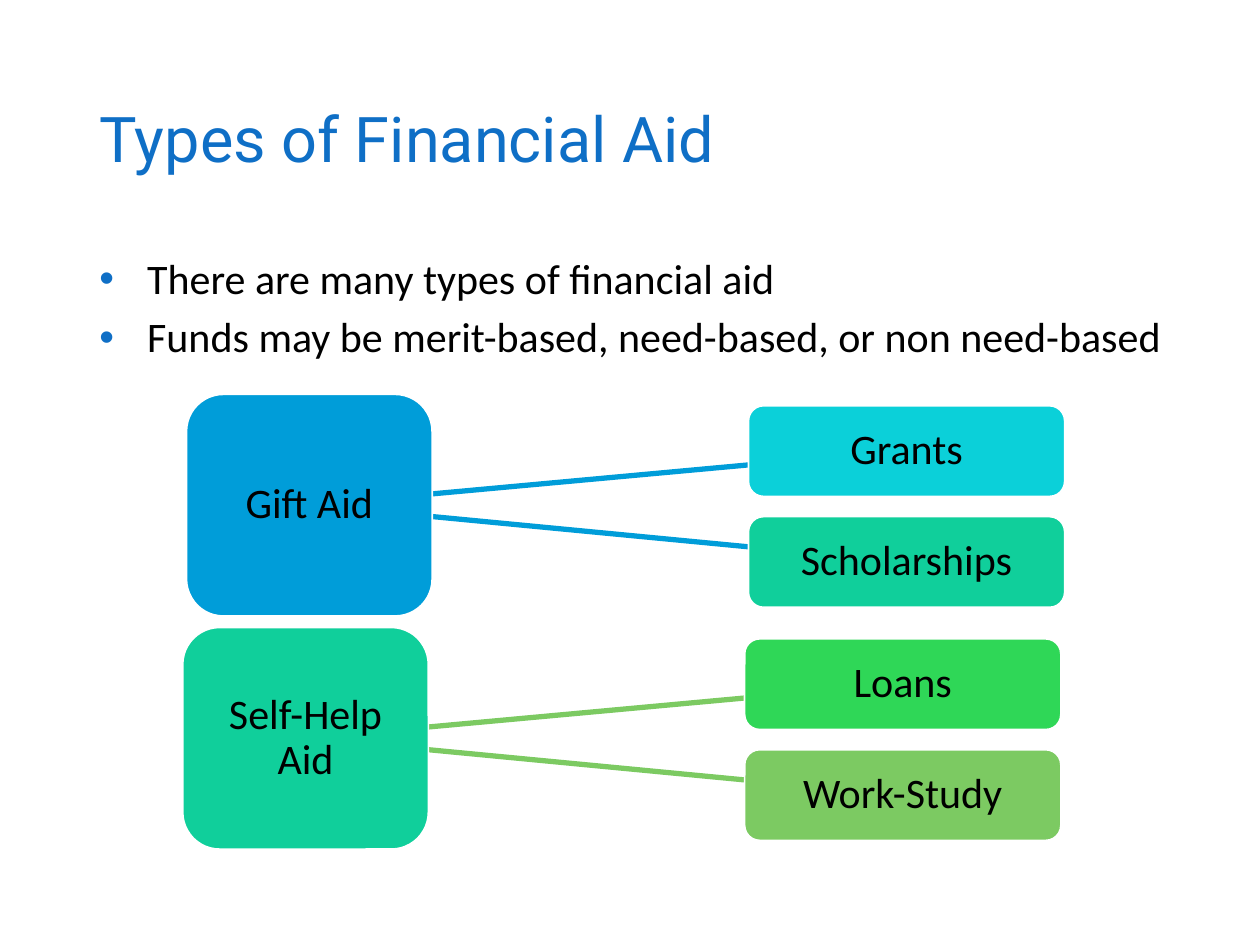
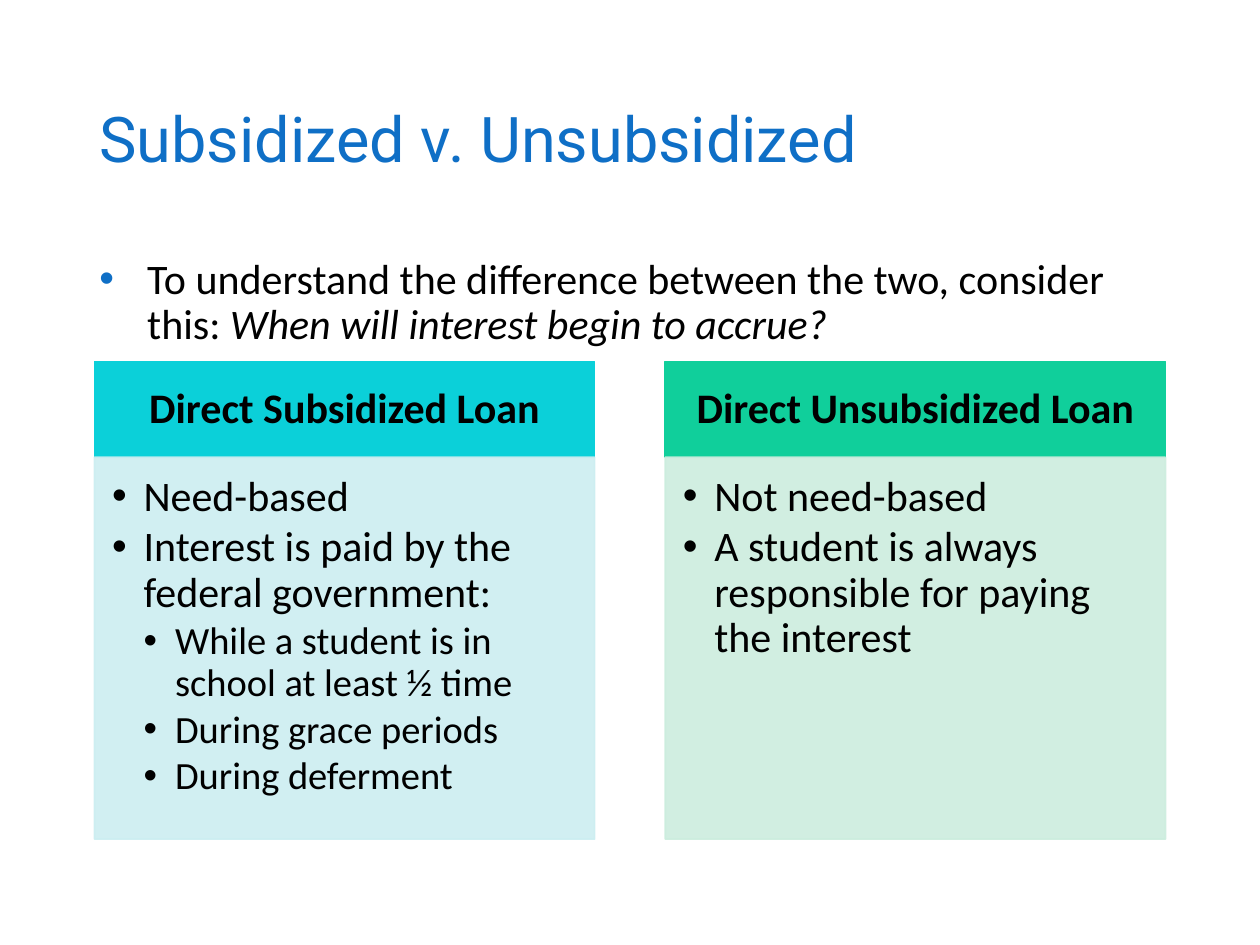
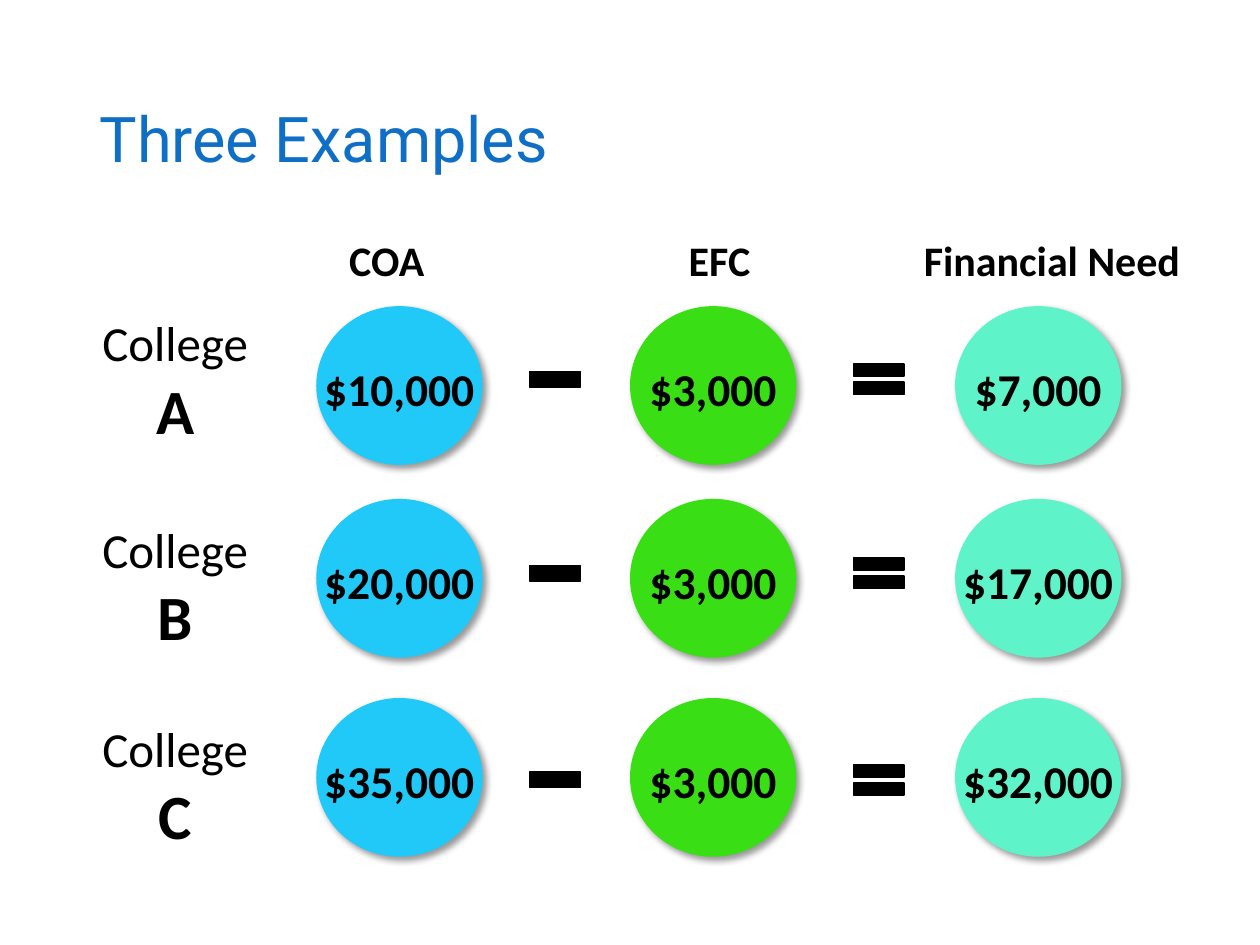
"""Build three slides on financial aid: types, loan comparison and need examples."""
from dataclasses import dataclass

from lxml.etree import SubElement
from pptx import Presentation
from pptx.dml.color import RGBColor
from pptx.enum.shapes import MSO_CONNECTOR, MSO_SHAPE
from pptx.enum.text import MSO_ANCHOR, PP_ALIGN
from pptx.oxml.ns import qn
from pptx.util import Inches, Pt


@dataclass(frozen=True)
class Theme:
    heading_font: str = "Roboto"
    body_font: str = "Calibri"
    title_blue: str = "0F6FC6"
    black: str = "000000"
    white: str = "FFFFFF"
    blue: str = "009DD9"
    cyan: str = "0BD0D9"
    teal: str = "10CF9B"
    green: str = "2FD757"
    leaf: str = "7CCA62"
    pale_cyan: str = "CCEEF1"
    pale_teal: str = "CCEDDE"
    sky: str = "20C9F8"
    lime: str = "3ADE14"
    mint: str = "5FF3CA"
    title: int = 36
    body: int = 24
    detail: int = 22
    amount: int = 26
    college: int = 28


T = Theme()


def write(p, text, color=T.black, bullet=None, indent=0.25, hang=0.25, para=None, **font):
    """Add a run to a paragraph, with an optional bullet and paragraph formats."""
    if bullet:
        pPr = p._p.get_or_add_pPr()
        pPr.set("marL", str(Inches(indent)))
        pPr.set("indent", str(-Inches(hang)))
        clr = SubElement(pPr, qn("a:buClr"))
        SubElement(clr, qn("a:srgbClr"), val=bullet)
        SubElement(pPr, qn("a:buFont"), typeface="Arial")
        SubElement(pPr, qn("a:buChar"), char="•")
    for key, value in (para or {}).items():
        setattr(p, key, value)
    r = p.add_run()
    r.text = text
    fmt = {"name": T.body_font, "size": Pt(T.body)} | font
    for key, value in fmt.items():
        setattr(r.font, key, value)
    r.font.color.rgb = RGBColor.from_string(color)


def add_block(s, kind, left, top, width, height, fill, line=None, margins=None):
    """Add a filled preset shape with middle-anchored text and no shadow."""
    sp = s.shapes.add_shape(kind, Inches(left), Inches(top), Inches(width), Inches(height))
    sp.shadow.inherit = False
    sp.fill.solid()
    sp.fill.fore_color.rgb = RGBColor.from_string(fill)
    if line:
        sp.line.color.rgb = RGBColor.from_string(line)
        sp.line.width = Pt(1)
    else:
        sp.line.fill.background()
    tf = sp.text_frame
    tf.word_wrap = True
    tf.vertical_anchor = MSO_ANCHOR.MIDDLE
    for side, value in zip(("left", "top", "right", "bottom"), margins or ()):
        setattr(tf, f"margin_{side}", Inches(value))
    return sp


CENTER = {"alignment": PP_ALIGN.CENTER}
TIGHT = {"line_spacing": 0.9}

prs = Presentation()
prs.slide_width, prs.slide_height = Inches(10), Inches(7.5)

slides = []
for title in ("Types of Financial Aid", "Subsidized v. Unsubsidized", "Three Examples"):
    s = prs.slides.add_slide(prs.slide_layouts[5])
    sp = s.shapes.title
    sp.left, sp.top, sp.width, sp.height = map(Inches, (0.69, 0.4, 8.62, 1.45))
    sp.text_frame.vertical_anchor = MSO_ANCHOR.MIDDLE
    write(sp.text_frame.paragraphs[0], title, T.title_blue,
          para=TIGHT | {"alignment": PP_ALIGN.LEFT},
          name=T.heading_font, size=Pt(T.title))
    slides.append(s)
types_slide, loans_slide, examples_slide = slides

intros = [
    (types_slide, 8.9, ["There are many types of financial aid",
                        "Funds may be merit-based, need-based, or non need-based"]),
    (loans_slide, 8.62, ["To understand the difference between the two, consider this: "]),
]
for s, width, lines in intros:
    tf = s.shapes.add_textbox(Inches(0.69), Inches(2), Inches(width), Inches(0.9)).text_frame
    tf.word_wrap = True
    for i, text in enumerate(lines):
        p = tf.add_paragraph() if i else tf.paragraphs[0]
        write(p, text, bullet=T.title_blue, indent=0.38, hang=0.38,
              para=TIGHT | {"space_before": Pt(7.5 if i else 0)})
write(p, "When will interest begin to accrue?", italic=True)

s = types_slide
aid_groups = [
    ("Gift Aid", 1.48, 3.13, T.blue, T.blue,
     [("Grants", T.cyan), ("Scholarships", T.teal)]),
    ("Self-Help Aid", 1.45, 4.98, T.teal, T.leaf,
     [("Loans", T.green), ("Work-Study", T.leaf)]),
]
link_ends = [(0.79, 0.56), (0.97, 1.21)]
for name, left, top, fill, link_color, kinds in aid_groups:
    kind_left = left + 4.46
    blocks = [(name, left, top, 1.95, 1.76, fill, 0.16)]
    for i, (kind, kind_fill) in enumerate(kinds):
        blocks.append((kind, kind_left, top + 0.09 + 0.88 * i, 2.51, 0.72, kind_fill, 0.11))
        start, end = link_ends[i]
        link = s.shapes.add_connector(
            MSO_CONNECTOR.STRAIGHT, Inches(left + 1.95), Inches(top + start),
            Inches(kind_left), Inches(top + end))
        link.line.color.rgb = RGBColor.from_string(link_color)
        link.line.width = Pt(3)
        SubElement(link.element.spPr, qn("a:effectLst"))
    for text, x, y, width, height, color, margin in blocks:
        sp = add_block(s, MSO_SHAPE.ROUNDED_RECTANGLE, x, y, width, height, color,
                       T.white, [margin] * 4)
        write(sp.text_frame.paragraphs[0], text, para=CENTER | TIGHT)

s = loans_slide
loans = [
    ("Direct Subsidized Loan", T.cyan, T.pale_cyan,
     [(1, "Need-based"), (1, "Interest is paid by the federal government:"),
      (2, "While a student is in school at least ½ time"),
      (2, "During grace periods"), (2, "During deferment")]),
    ("Direct Unsubsidized Loan", T.teal, T.pale_teal,
     [(1, "Not need-based"),
      (1, "A student is always responsible for paying the interest")]),
]
for col, (name, head_fill, body_fill, points) in enumerate(loans):
    left = 0.75 + 4.53 * col
    head = add_block(s, MSO_SHAPE.RECTANGLE, left, 2.87, 3.97, 0.76, head_fill, head_fill,
                     (0.19, 0.11, 0.19, 0.11))
    write(head.text_frame.paragraphs[0], name, para=CENTER | TIGHT, bold=True)
    body = add_block(s, MSO_SHAPE.RECTANGLE, left, 3.63, 3.97, 3.03, body_fill, body_fill,
                     (0.14, 0.14, 0.19, 0.21))
    for clr in body.element.spPr.iter(qn("a:srgbClr")):
        SubElement(clr, qn("a:alpha"), val="90000")
    tf = body.text_frame
    tf.vertical_anchor = MSO_ANCHOR.TOP
    for i, (level, text) in enumerate(points):
        p = tf.add_paragraph() if i else tf.paragraphs[0]
        write(p, text, bullet=T.black, indent=0.25 * level,
              para=TIGHT | {"alignment": PP_ALIGN.LEFT, "level": level, "space_after": Pt(3)},
              size=Pt(T.body if level == 1 else T.detail))

s = examples_slide
table = s.shapes.add_table(1, 3, Inches(1.75), Inches(1.83), Inches(7.92), Inches(0.5)).table
table.horz_banding = False
for cell, heading in zip(table.rows[0].cells, ("COA", "EFC", "Financial Need")):
    cell.fill.solid()
    cell.fill.fore_color.rgb = RGBColor.from_string(T.white)
    write(cell.text_frame.paragraphs[0], heading, para=CENTER, bold=True)

colleges = [
    ("A", 2.43, 2.43, 3.01, ("$10,000", "$3,000", "$7,000")),
    ("B", 3.96, 4.07, 4.55, ("$20,000", "$3,000", "$17,000")),
    ("C", 5.54, 5.65, 6.19, ("$35,000", "$3,000", "$32,000")),
]
circles = [(2.51, T.sky), (5, T.lime), (7.58, T.mint)]
operators = [(MSO_SHAPE.MATH_MINUS, 4.13, 0.52), (MSO_SHAPE.MATH_EQUAL, 6.7, 0.41)]
for letter, top, label_top, middle, amounts in colleges:
    tf = s.shapes.add_textbox(Inches(0.7), Inches(label_top), Inches(1.38),
                              Inches(1.18)).text_frame
    tf.word_wrap = True
    write(tf.paragraphs[0], "College", para=CENTER, size=Pt(T.college))
    write(tf.add_paragraph(), letter, para=CENTER, size=Pt(T.title), bold=True)
    for kind, left, height in operators:
        add_block(s, kind, left, middle - height / 2, 0.55, height, T.black, T.black)
    for (left, fill), amount in zip(circles, amounts):
        sp = add_block(s, MSO_SHAPE.OVAL, left, top, 1.32, 1.26, fill,
                       margins=(0.1, 0.1, 0.1, 0.05))
        sp.text_frame.word_wrap = False
        write(sp.text_frame.paragraphs[0], amount, para=CENTER, size=Pt(T.amount), bold=True)
        shadow = SubElement(sp.element.spPr.find(qn("a:effectLst")), qn("a:outerShdw"),
                            blurRad=str(Pt(4)), dist=str(Pt(3)), dir=str(45 * 60000),
                            algn="tl", rotWithShape="0")
        clr = SubElement(shadow, qn("a:srgbClr"), val=T.black)
        SubElement(clr, qn("a:alpha"), val="40000")

prs.save("out.pptx")
